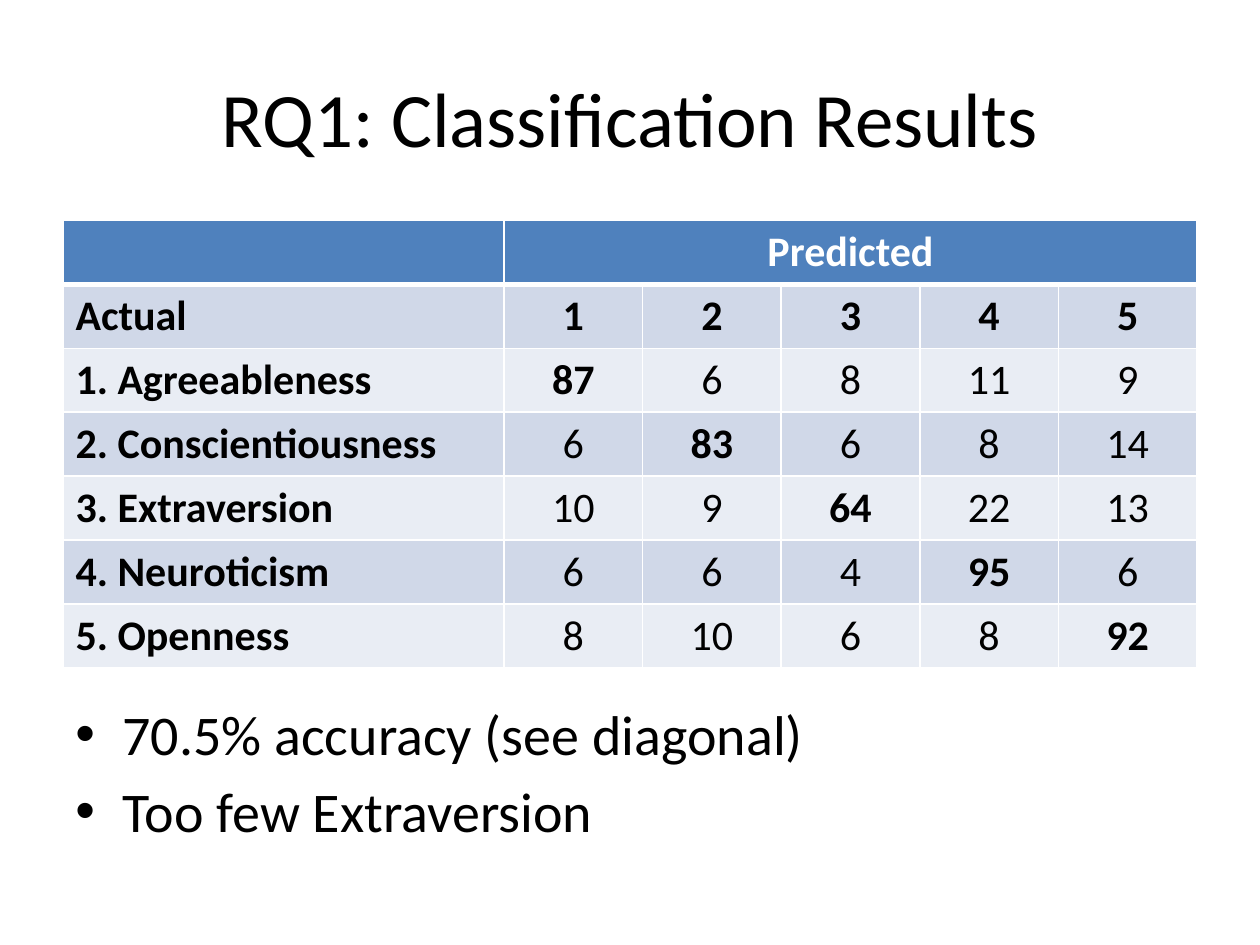
"""Build the classification results slide with its confusion matrix."""
import dataclasses

import lxml.etree
import pptx
import pptx.dml.color
import pptx.enum.text
import pptx.oxml.ns
import pptx.util

Pt = pptx.util.Pt
ALIGN = pptx.enum.text.PP_ALIGN
ANCHOR = pptx.enum.text.MSO_ANCHOR
BLACK, WHITE = "000000", "FFFFFF"
HEADER_FILL, BANDS = "4F81BD", ("D0D8E8", "E9EDF4")
LEFT, WIDTH = 36, 648


@dataclasses.dataclass(frozen=True)
class Trait:
    name: str
    counts: tuple[int, ...]


TRAITS = (
    Trait("Agreeableness", (87, 6, 8, 11, 9)),
    Trait("Conscientiousness", (6, 83, 6, 8, 14)),
    Trait("Extraversion", (10, 9, 64, 22, 13)),
    Trait("Neuroticism", (6, 6, 4, 95, 6)),
    Trait("Openness", (8, 10, 6, 8, 92)),
)
FINDINGS = ("70.5% accuracy (see diagonal)", "Too few Extraversion")


def color(value: str) -> pptx.dml.color.RGBColor:
    return pptx.dml.color.RGBColor.from_string(value)


def add_span(para, text: str, size: float, ink: str = BLACK, bold: bool = False) -> None:
    span = para.add_run()
    span.text = text
    span.font.name = "Calibri"
    span.font.size = Pt(size)
    span.font.bold = bold
    span.font.color.rgb = color(ink)


def add_element(parent, tag: str, **attributes: str):
    return lxml.etree.SubElement(parent, pptx.oxml.ns.qn(tag), attributes)


def set_borders(cell, top: float, bottom: float) -> None:
    properties = cell._tc.get_or_add_tcPr()
    for side, width in (("L", 1), ("R", 1), ("T", top), ("B", bottom)):
        line = add_element(properties, f"a:ln{side}", w=str(Pt(width)))
        fill = add_element(line, "a:solidFill")
        add_element(fill, "a:srgbClr", val=WHITE)


def format_cell(cell, row: int) -> None:
    set_borders(cell, 3 if row == 1 else 1, 3 if row == 0 else 1)
    cell.fill.solid()
    cell.fill.fore_color.rgb = color(BANDS[(row - 1) % 2] if row else HEADER_FILL)


def write_cell(cell, text: str, centered: bool = True, ink: str = BLACK, bold: bool = True) -> None:
    para = cell.text_frame.paragraphs[0]
    para.alignment = ALIGN.CENTER if centered else ALIGN.LEFT
    add_span(para, text, 24, ink, bold)


def add_matrix(page) -> None:
    rows, columns = len(TRAITS) + 2, len(TRAITS) + 1
    frame = page.shapes.add_table(rows, columns, Pt(LEFT), Pt(126), Pt(WIDTH), Pt(36 * rows))
    table = frame.table
    for index, column in enumerate(table.columns):
        column.width = Pt(79.2 if index else 252)
    for row in range(rows):
        for column in range(columns):
            format_cell(table.cell(row, column), row)
    table.cell(0, 1).merge(table.cell(0, columns - 1))
    write_cell(table.cell(0, 1), "Predicted", ink=WHITE)
    write_cell(table.cell(1, 0), "Actual", centered=False)
    for number, trait in enumerate(TRAITS, 1):
        write_cell(table.cell(1, number), str(number))
        write_cell(table.cell(number + 1, 0), f"{number}. {trait.name}", centered=False)
        for column, count in enumerate(trait.counts, 1):
            write_cell(table.cell(number + 1, column), str(count), bold=column == number)


def add_title(page, text: str) -> None:
    title = page.shapes.title
    title.left, title.top, title.width, title.height = Pt(LEFT), Pt(21.6), Pt(WIDTH), Pt(90)
    title.text_frame.vertical_anchor = ANCHOR.MIDDLE
    para = title.text_frame.paragraphs[0]
    para.alignment = ALIGN.CENTER
    add_span(para, text, 44)


def add_findings(page) -> None:
    box = page.shapes.add_textbox(Pt(LEFT), Pt(396), Pt(WIDTH), Pt(102))
    box.text_frame.word_wrap = True
    for index, finding in enumerate(FINDINGS):
        para = box.text_frame.add_paragraph() if index else box.text_frame.paragraphs[0]
        properties = para._p.get_or_add_pPr()
        properties.set("marL", str(Pt(27)))
        properties.set("indent", str(Pt(-27)))
        add_element(properties, "a:buFont", typeface="Arial")
        add_element(properties, "a:buChar", char="•")
        if index:
            para.space_before = Pt(6)
        add_span(para, finding, 32)


def main() -> None:
    deck = pptx.Presentation()
    deck.slide_width, deck.slide_height = Pt(720), Pt(540)
    page = deck.slides.add_slide(deck.slide_layouts[5])
    add_title(page, "RQ1: Classification Results")
    add_matrix(page)
    add_findings(page)
    deck.save("out.pptx")


if __name__ == "__main__":
    main()
